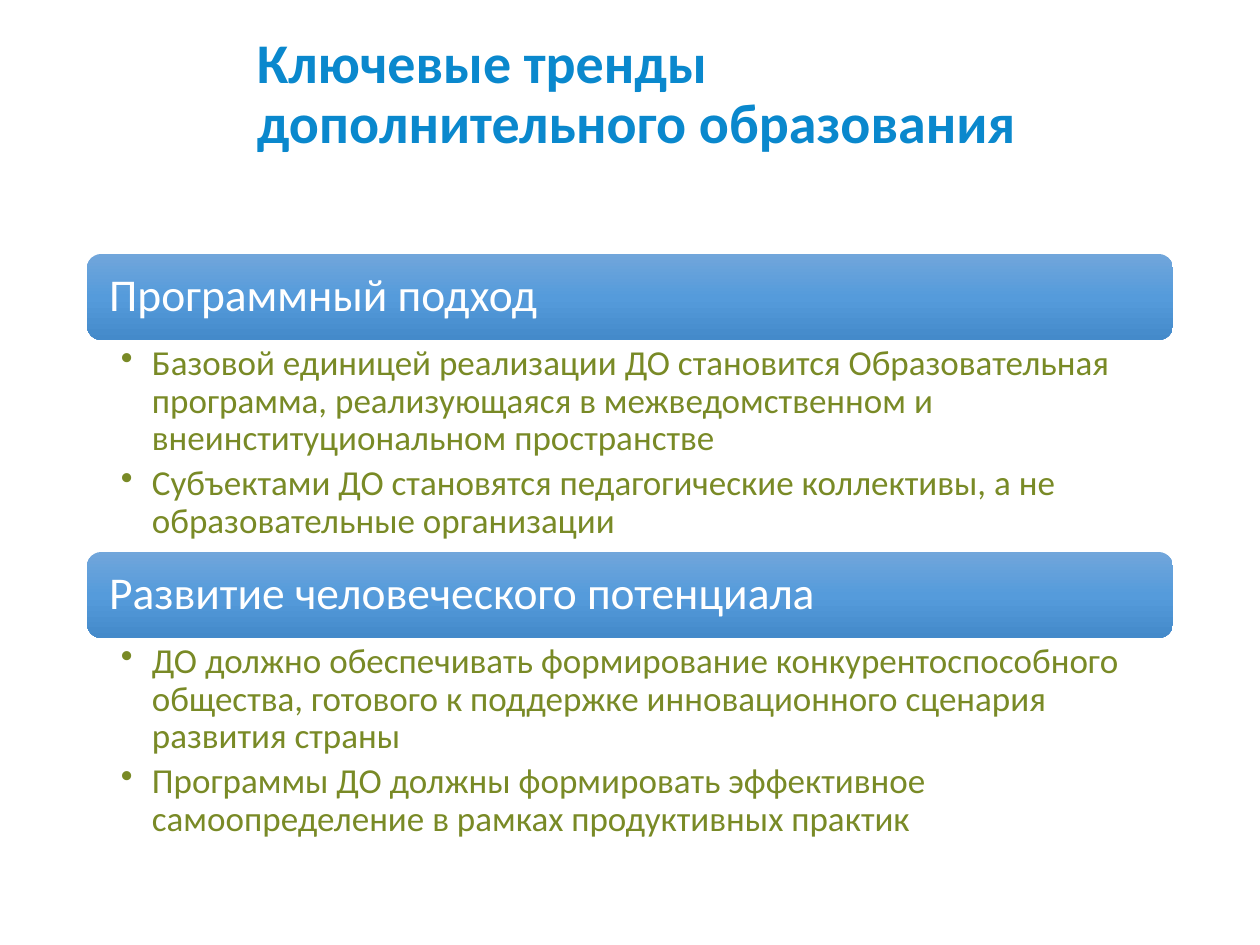
from copy import deepcopy
from dataclasses import dataclass

from lxml import etree
from pptx import Presentation
from pptx.dml.color import RGBColor
from pptx.enum.shapes import MSO_SHAPE
from pptx.enum.text import MSO_ANCHOR, PP_ALIGN
from pptx.oxml.ns import qn
from pptx.util import Pt

TITLE = "Ключевые тренды дополнительного образования"
TRENDS = [
    ("Программный подход", [
        "Базовой единицей реализации ДО становится Образовательная программа, "
        "реализующаяся в межведомственном и внеинституциональном пространстве",
        "Субъектами ДО становятся педагогические коллективы, а не "
        "образовательные организации",
    ]),
    ("Развитие человеческого потенциала", [
        "ДО должно обеспечивать формирование конкурентоспособного общества, "
        "готового к поддержке инновационного сценария развития страны",
        "Программы ДО должны формировать эффективное самоопределение "
        "в рамках продуктивных практик",
    ]),
]

ROUNDED = MSO_SHAPE.ROUNDED_RECTANGLE
TOP, MIDDLE = MSO_ANCHOR.TOP, MSO_ANCHOR.MIDDLE
LEFT = PP_ALIGN.LEFT


@dataclass(frozen=True)
class Theme:
    font: str = "Calibri"
    title: str = "0A88CD"
    heading: str = "FFFFFF"
    detail: str = "798A26"
    bar: tuple = ("71A6DB", "559BDB", "448ACA")
    title_size: int = 32
    heading_size: int = 26
    detail_size: int = 20


THEME = Theme()

# Lengths in px
SLIDE_W, SLIDE_H = 1260, 945
TITLE_BOX = (244, 4, 819, 183)
LIST_LEFT, LIST_TOP, LIST_W = 87, 254, 1086
BAR_H, DETAIL_H = 86, 212
BULLET_INDENT = 31


def px(length):
    return length * 914400 // 126


def add_bullet(paragraph):
    paragraph.level = 1
    props = paragraph._p.get_or_add_pPr()
    props.set("marL", str(px(BULLET_INDENT)))
    props.set("indent", str(-px(BULLET_INDENT)))
    etree.SubElement(props, qn("a:buChar")).set("char", "•")


def write(shape, paragraphs, *, size, color, bold=False, anchor=TOP,
          insets=(13, 6, 13, 6), bullets=False, space_after=0):
    """Fill a shape with paragraphs; insets are left, top, right, bottom."""
    frame = shape.text_frame
    frame.word_wrap = True
    frame.vertical_anchor = anchor
    (frame.margin_left, frame.margin_top,
     frame.margin_right, frame.margin_bottom) = map(px, insets)
    for index, text in enumerate(paragraphs):
        paragraph = frame.paragraphs[0] if index == 0 else frame.add_paragraph()
        if bullets:
            add_bullet(paragraph)
        paragraph.alignment = LEFT
        paragraph.line_spacing = 0.9
        paragraph.space_after = Pt(space_after)
        run = paragraph.add_run()
        run.text = text
        run.font.name = THEME.font
        run.font.size = Pt(size)
        run.font.bold = bold
        run.font.color.rgb = RGBColor.from_string(color)


def fill_gradient(shape, colors):
    """Spread the colours evenly from top to bottom."""
    fill = shape.fill
    fill.gradient()
    fill.gradient_angle = 270
    stop_list = shape._element.spPr.find(".//" + qn("a:gsLst"))
    while len(stop_list) < len(colors):
        stop_list.append(deepcopy(stop_list[0]))
    for index, (stop, color) in enumerate(zip(fill.gradient_stops, colors)):
        stop.position = index / (len(colors) - 1)
        stop.color.rgb = RGBColor.from_string(color)


def add_trend(shapes, top, heading, details):
    bar = shapes.add_shape(ROUNDED, *map(px, (LIST_LEFT, top, LIST_W, BAR_H)))
    bar.shadow.inherit = False
    bar.line.fill.background()
    fill_gradient(bar, THEME.bar)
    write(bar, [heading], size=THEME.heading_size, color=THEME.heading,
          anchor=MIDDLE, insets=(18, 18, 18, 18))

    detail_box = shapes.add_textbox(
        *map(px, (LIST_LEFT, top + BAR_H, LIST_W, DETAIL_H)))
    write(detail_box, details, size=THEME.detail_size, color=THEME.detail,
          insets=(34, 5, 25, 5), bullets=True, space_after=4)


def main():
    deck = Presentation()
    deck.slide_width, deck.slide_height = px(SLIDE_W), px(SLIDE_H)
    shapes = deck.slides.add_slide(deck.slide_layouts[6]).shapes

    write(shapes.add_textbox(*map(px, TITLE_BOX)), [TITLE],
          size=THEME.title_size, color=THEME.title, bold=True, anchor=MIDDLE)
    for index, (heading, details) in enumerate(TRENDS):
        add_trend(shapes, LIST_TOP + index * (BAR_H + DETAIL_H), heading, details)

    deck.save("out.pptx")


if __name__ == "__main__":
    main()
